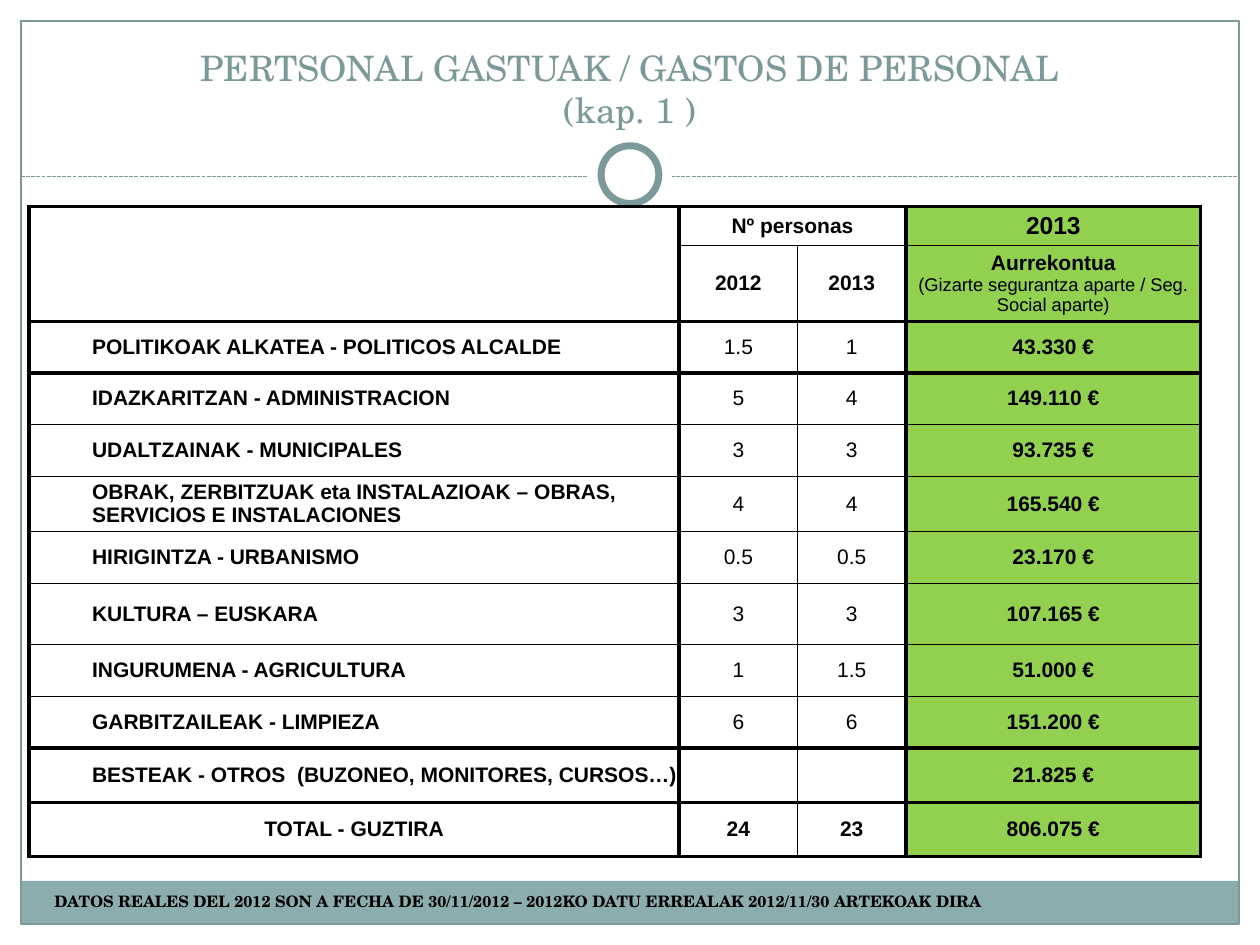
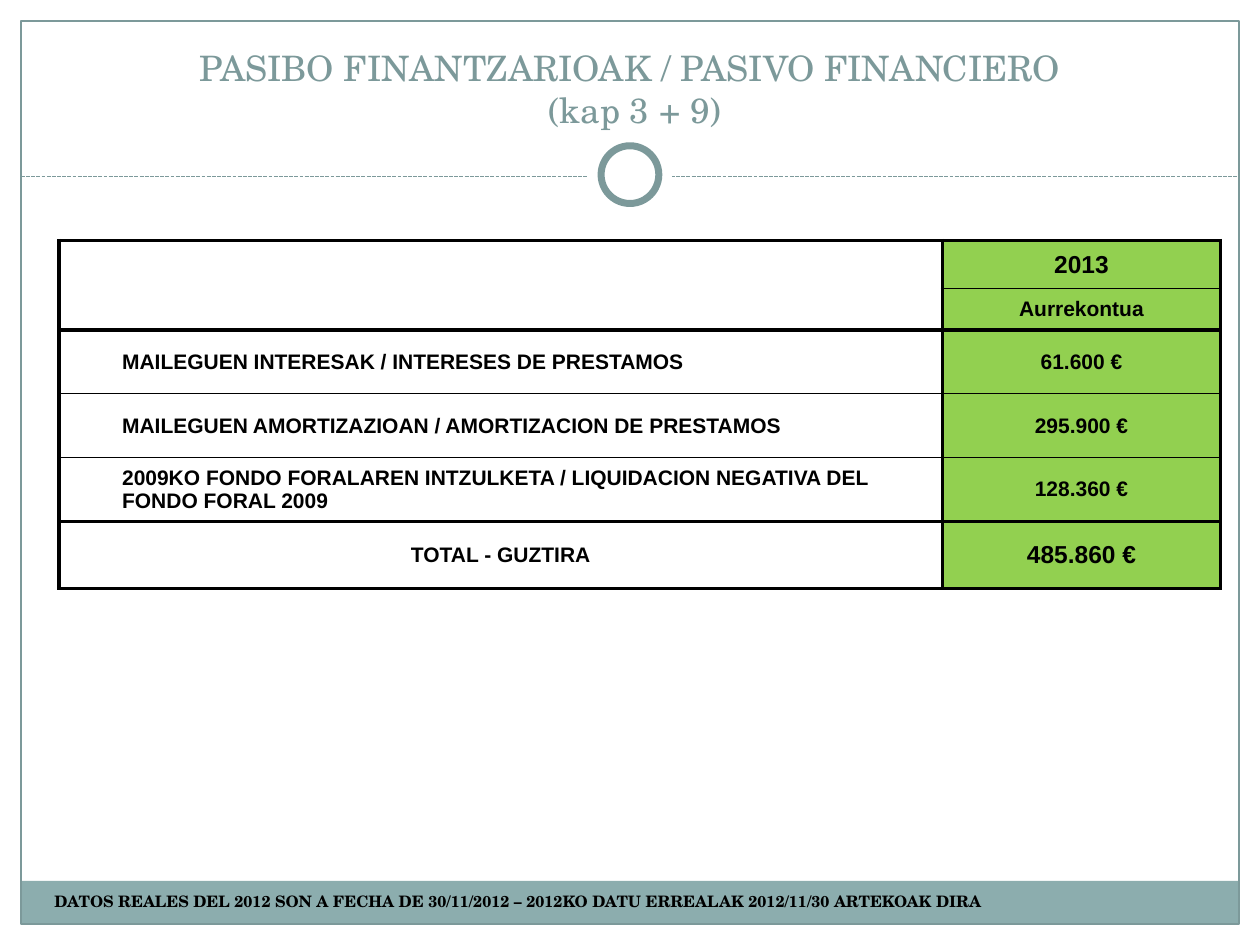
from lxml import etree
from pptx import Presentation
from pptx.dml.color import RGBColor
from pptx.enum.dml import MSO_LINE
from pptx.enum.shapes import MSO_CONNECTOR, MSO_SHAPE
from pptx.enum.text import MSO_ANCHOR, MSO_AUTO_SIZE, PP_ALIGN
from pptx.oxml.ns import qn
from pptx.util import Pt

RECTANGLE, OVAL = MSO_SHAPE.RECTANGLE, MSO_SHAPE.OVAL
STRAIGHT = MSO_CONNECTOR.STRAIGHT
DASH = MSO_LINE.SQUARE_DOT
LEFT, CENTER = PP_ALIGN.LEFT, PP_ALIGN.CENTER
MIDDLE, BOTTOM = MSO_ANCHOR.MIDDLE, MSO_ANCHOR.BOTTOM
NO_AUTOFIT = MSO_AUTO_SIZE.NONE

TEAL = RGBColor(0x7C, 0x99, 0x9A)
BAND = RGBColor(0x8C, 0xAD, 0xAE)
GREEN = RGBColor(0x92, 0xD0, 0x50)
WHITE = RGBColor(0xFF, 0xFF, 0xFF)
BLACK = RGBColor(0, 0, 0)

SERIF, SANS = "TeX Gyre Schola", "Arial"
THICK, MEDIUM, THIN = 2.25, 1, 0.5
LABEL_INDENT = 36

SLIDE_SIZE = (720, 540)
FRAME_BOX = (12, 12, 696, 516)
TITLE_BOX = (24, 18, 672, 60)
FOOTER = ("DATOS REALES DEL 2012 SON A FECHA DE 30/11/2012 – "
          "2012KO DATU ERREALAK 2012/11/30 ARTEKOAK DIRA")

STAFF = {
    "title": "PERTSONAL GASTUAK / GASTOS DE PERSONAL\v(kap. 1 )",
    "box": (16.6, 118.1),
    "columns": [371.5, 67.7, 61.9, 168.5],
    "rows": [22.3, 43.2, 29.5, 29.5, 29.5, 31.7, 29.5, 35.3, 29.5, 29.5, 31, 31],
    "merges": [((0, 0), (1, 0)), ((0, 1), (0, 2))],
    "thick_rules": {0, 2, 3, 10, 11, 12},
    "inner_columns": {2},
    "large": {(0, 3)},
    "cells": [
        ["", "Nº personas", "", "2013"],
        ["", "2012", "2013",
         "Aurrekontua\n(Gizarte segurantza aparte / Seg. Social aparte)"],
        ["POLITIKOAK ALKATEA - POLITICOS ALCALDE", "1.5", "1", "43.330 €"],
        ["IDAZKARITZAN - ADMINISTRACION", "5", "4", "149.110 €"],
        ["UDALTZAINAK - MUNICIPALES", "3", "3", "93.735 €"],
        ["OBRAK, ZERBITZUAK eta INSTALAZIOAK – OBRAS, SERVICIOS E INSTALACIONES",
         "4", "4", "165.540 €"],
        ["HIRIGINTZA - URBANISMO", "0.5", "0.5", "23.170 €"],
        ["KULTURA – EUSKARA", "3", "3", "107.165 €"],
        ["INGURUMENA - AGRICULTURA", "1", "1.5", "51.000 €"],
        ["GARBITZAILEAK - LIMPIEZA", "6", "6", "151.200 €"],
        ["BESTEAK - OTROS  (BUZONEO, MONITORES, CURSOS…)", "", "", "21.825 €"],
        ["TOTAL - GUZTIRA", "24", "23", "806.075 €"],
    ],
}

DEBT = {
    "title": "PASIBO FINANTZARIOAK / PASIVO FINANCIERO\v (kap 3 + 9)",
    "box": (33.8, 137.5),
    "columns": [504.7, 159.1],
    "rows": [27.4, 23.8, 36.4, 36.4, 36.4, 38.5],
    "merges": [((0, 0), (1, 0))],
    "thick_rules": {0, 2, 5, 6},
    "inner_columns": set(),
    "large": {(0, 1), (5, 1)},
    "cells": [
        ["", "2013"],
        ["", "Aurrekontua"],
        ["MAILEGUEN INTERESAK / INTERESES DE PRESTAMOS", "61.600 €"],
        ["MAILEGUEN AMORTIZAZIOAN / AMORTIZACION DE PRESTAMOS", "295.900 €"],
        ["2009KO FONDO FORALAREN INTZULKETA / LIQUIDACION NEGATIVA DEL FONDO FORAL 2009",
         "128.360 €"],
        ["TOTAL - GUZTIRA", "485.860 €"],
    ],
}


def set_font(paragraph, name, size, color, bold=False):
    values = {"name": name, "size": Pt(size), "bold": bold}
    for attribute, value in values.items():
        setattr(paragraph.font, attribute, value)
    paragraph.font.color.rgb = color


def add_plain_shape(slide, kind, box, fill=None, line_width=None):
    shape = slide.shapes.add_shape(kind, *map(Pt, box))
    shape.shadow.inherit = False
    if fill is None:
        shape.fill.background()
    else:
        shape.fill.solid()
        shape.fill.fore_color.rgb = fill
    if line_width is None:
        shape.line.fill.background()
    else:
        shape.line.color.rgb = TEAL
        shape.line.width = Pt(line_width)


def add_frame(slide, box):
    """Draw the footer band, border, dashed rule and ring inside the box."""
    left, top, width, height = box
    center_x, rule_y = left + width / 2, top + 89
    add_plain_shape(slide, RECTANGLE, (left, top + height - 24.6, width, 24.6), BAND)
    add_plain_shape(slide, RECTANGLE, box, line_width=0.75)

    rule = slide.shapes.add_connector(
        STRAIGHT, Pt(left), Pt(rule_y), Pt(left + width), Pt(rule_y))
    rule.line.color.rgb = TEAL
    rule.line.width = Pt(0.75)
    rule.line.dash_style = DASH
    etree.SubElement(rule._element.spPr, qn("a:effectLst"))

    for diameter, line_width in ((48, None), (33, 4)):
        ring_box = (center_x - diameter / 2, rule_y - 1.2 - diameter / 2,
                    diameter, diameter)
        add_plain_shape(slide, OVAL, ring_box, WHITE, line_width)

    footer = slide.shapes.add_textbox(
        Pt(left + 12), Pt(top + height - 21.8), Pt(567), Pt(28.8))
    footer.text_frame.word_wrap = True
    footer.text_frame.text = FOOTER
    set_font(footer.text_frame.paragraphs[0], SERIF, 9, BLACK, bold=True)


def set_title(slide, text, box):
    title = slide.shapes.title
    for attribute, value in zip(("left", "top", "width", "height"), box):
        setattr(title, attribute, Pt(value))
    frame = title.text_frame
    frame.text = text
    frame.auto_size = NO_AUTOFIT
    frame.vertical_anchor = BOTTOM
    frame.paragraphs[0].alignment = CENTER
    set_font(frame.paragraphs[0], SERIF, 20, TEAL)


def set_borders(cell, widths):
    """Add black borders of the given left, right, top and bottom widths."""
    properties = cell._tc.get_or_add_tcPr()
    for side, width in zip("LRTB", widths):
        line = etree.SubElement(properties, qn(f"a:ln{side}"), w=str(Pt(width)))
        fill = etree.SubElement(line, qn("a:solidFill"))
        etree.SubElement(fill, qn("a:srgbClr"), val=str(BLACK))


def write_cell(cell, text, size, bold, alignment):
    for side in ("left", "right", "top", "bottom"):
        setattr(cell, f"margin_{side}", 0)
    if alignment == LEFT:
        cell.margin_left = Pt(LABEL_INDENT)
    cell.vertical_anchor = MIDDLE
    cell.text = text
    for index, paragraph in enumerate(cell.text_frame.paragraphs):
        paragraph.alignment = alignment
        is_note = index > 0
        set_font(paragraph, SANS, 10.5 if is_note else size, BLACK,
                 bold and not is_note)


def add_budget_table(slide, budget):
    columns, rows = budget["columns"], budget["rows"]
    last_row, last_column = len(rows) - 1, len(columns) - 1
    left, top = budget["box"]
    table = slide.shapes.add_table(
        len(rows), len(columns), Pt(left), Pt(top),
        Pt(sum(columns)), Pt(sum(rows))).table
    table.first_row = table.horz_banding = False
    for column, width in zip(table.columns, columns):
        column.width = Pt(width)
    for row, height in zip(table.rows, rows):
        row.height = Pt(height)
    for first, last in budget["merges"]:
        table.cell(*first).merge(table.cell(*last))

    def row_rule(index):
        return THICK if index in budget["thick_rules"] else THIN

    def column_rule(index):
        return MEDIUM if index in budget["inner_columns"] else THICK

    for r, texts in enumerate(budget["cells"]):
        for c, text in enumerate(texts):
            cell = table.cell(r, c)
            if cell.is_spanned:
                continue
            is_body = 2 <= r < last_row
            is_count = is_body and 0 < c < last_column
            write_cell(cell, text, 14 if (r, c) in budget["large"] else 12,
                       not is_count, LEFT if is_body and c == 0 else CENTER)
            right = c + (cell.span_width if cell.is_merge_origin else 1)
            bottom = r + (cell.span_height if cell.is_merge_origin else 1)
            set_borders(cell, (column_rule(c), column_rule(right),
                               row_rule(r), row_rule(bottom)))
            if c == last_column:
                cell.fill.solid()
                cell.fill.fore_color.rgb = GREEN
            else:
                cell.fill.background()


def add_budget_slide(presentation, budget):
    title_only = presentation.slide_layouts[5]
    slide = presentation.slides.add_slide(title_only)
    add_frame(slide, FRAME_BOX)
    set_title(slide, budget["title"], TITLE_BOX)
    add_budget_table(slide, budget)


def main():
    presentation = Presentation()
    presentation.slide_width, presentation.slide_height = map(Pt, SLIDE_SIZE)
    for budget in (STAFF, DEBT):
        add_budget_slide(presentation, budget)
    presentation.save("out.pptx")


if __name__ == "__main__":
    main()
